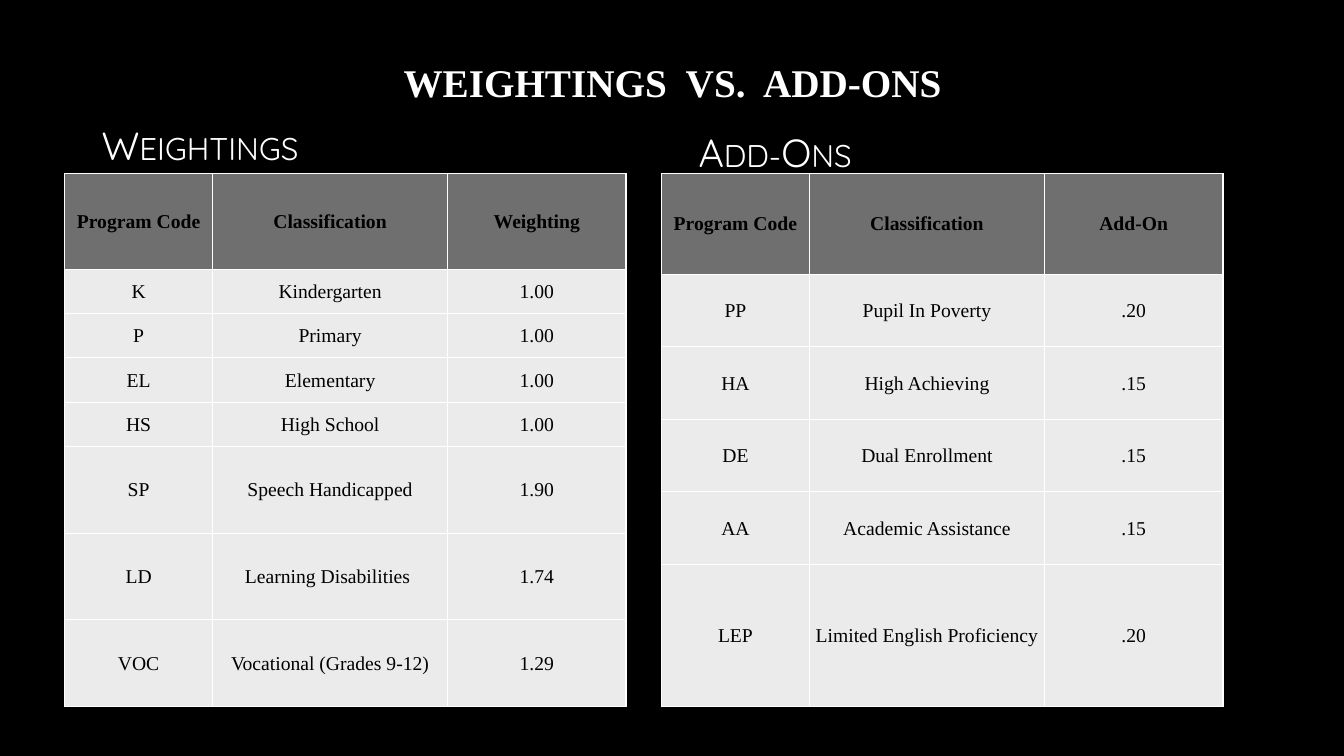
from dataclasses import dataclass
from lxml.etree import SubElement
from pptx import Presentation
from pptx.dml.color import RGBColor
from pptx.enum.text import MSO_ANCHOR, PP_ALIGN
from pptx.oxml.ns import qn
from pptx.util import Inches, Pt


@dataclass(frozen=True)
class Theme:
    background: str = "000000"
    light: str = "FFFFFF"
    dark: str = "000000"
    header_fill: str = "6F6F6F"
    body_fill: str = "EBEBEB"
    serif: str = "Times New Roman"
    rounded: str = "Quicksand"
    heading_size: int = 28
    table_size: int = 14
    border_width: int = 1


theme = Theme()


def style_paragraph(para, font_name, size, color, bold=False):
    for span in para.runs:
        span.font.name = font_name
        span.font.size = Pt(size)
        span.font.bold = bold
        span.font.color.rgb = RGBColor.from_string(color)


def add_borders(cell):
    properties = cell._tc.get_or_add_tcPr()
    for position, side in enumerate(("lnL", "lnR", "lnT", "lnB")):
        line = SubElement(properties, qn(f"a:{side}"), w=str(Pt(theme.border_width)))
        fill = SubElement(line, qn("a:solidFill"))
        SubElement(fill, qn("a:srgbClr"), val=theme.light)
        properties.remove(line)
        properties.insert(position, line)  # borders come before the fill


deck = Presentation()
deck.slide_width, deck.slide_height = Inches(13.33), Inches(7.5)
page = deck.slides.add_slide(deck.slide_layouts[6])
page.background.fill.solid()
page.background.fill.fore_color.rgb = RGBColor.from_string(theme.background)

# Title
title = page.shapes.add_textbox(Inches(0.92), Inches(0.4), Inches(11.5), Inches(0.83))
title.text_frame.word_wrap = True
title.text_frame.vertical_anchor = MSO_ANCHOR.MIDDLE
title.text_frame.text = "WEIGHTINGS  VS.  ADD-ONS"
title_para = title.text_frame.paragraphs[0]
title_para.alignment = PP_ALIGN.CENTER
style_paragraph(title_para, theme.serif, theme.heading_size, theme.light, bold=True)

# Panels: heading, heading box (left, width, height), table left, row heights, rows
column_widths = (1.47, 2.33, 1.77)
table_top, table_height = 1.72, 5.29
panels = [
    ("Weightings", (0.91, 5.64, 0.49), 0.64, [0.95] + [0.44] * 4 + [0.86] * 3, [
        ("Program Code", "Classification", "Weighting"),
        ("K", "Kindergarten", "1.00"),
        ("P", "Primary", "1.00"),
        ("EL", "Elementary", "1.00"),
        ("HS", "High School", "1.00"),
        ("SP", "Speech Handicapped", "1.90"),
        ("LD", "Learning Disabilities ", "1.74"),
        ("VOC", "Vocational (Grades 9-12)", "1.29"),
    ]),
    ("Add-Ons", (6.83, 5.67, 0.56), 6.56, [1] + [0.72] * 4 + [1.41], [
        ("Program Code", "Classification", "Add-On"),
        ("PP", "Pupil In Poverty", ".20"),
        ("HA", "High Achieving", ".15"),
        ("DE", "Dual Enrollment", ".15"),
        ("AA", "Academic Assistance", ".15"),
        ("LEP", "Limited English Proficiency", ".20"),
    ]),
]

for heading, (left, width, height), table_left, row_heights, rows in panels:
    # Heading in small capitals
    box = page.shapes.add_textbox(Inches(left), Inches(1.23), Inches(width), Inches(height))
    box.text_frame.word_wrap = True
    box.text_frame.vertical_anchor = MSO_ANCHOR.BOTTOM
    box.text_frame.text = heading
    para = box.text_frame.paragraphs[0]
    para.space_after = Pt(6)
    style_paragraph(para, theme.rounded, theme.heading_size, theme.light)
    para.runs[0].font._element.set("cap", "small")

    # Table
    table = page.shapes.add_table(
        len(rows), len(column_widths), Inches(table_left), Inches(table_top),
        Inches(sum(column_widths)), Inches(table_height)).table
    for column, column_width in zip(table.columns, column_widths):
        column.width = Inches(column_width)
    for row_index, (row_height, values) in enumerate(zip(row_heights, rows)):
        table.rows[row_index].height = Inches(row_height)
        is_header = row_index == 0
        for column_index, value in enumerate(values):
            cell = table.cell(row_index, column_index)
            cell.text_frame.text = value
            cell.vertical_anchor = MSO_ANCHOR.MIDDLE
            cell.margin_left = cell.margin_right = cell.margin_top = Inches(0.01)
            cell.margin_bottom = 0
            cell.fill.solid()
            cell.fill.fore_color.rgb = RGBColor.from_string(
                theme.header_fill if is_header else theme.body_fill)
            add_borders(cell)
            para = cell.text_frame.paragraphs[0]
            para.alignment = PP_ALIGN.CENTER
            style_paragraph(para, theme.serif, theme.table_size, theme.dark, bold=is_header)

deck.save("out.pptx")
